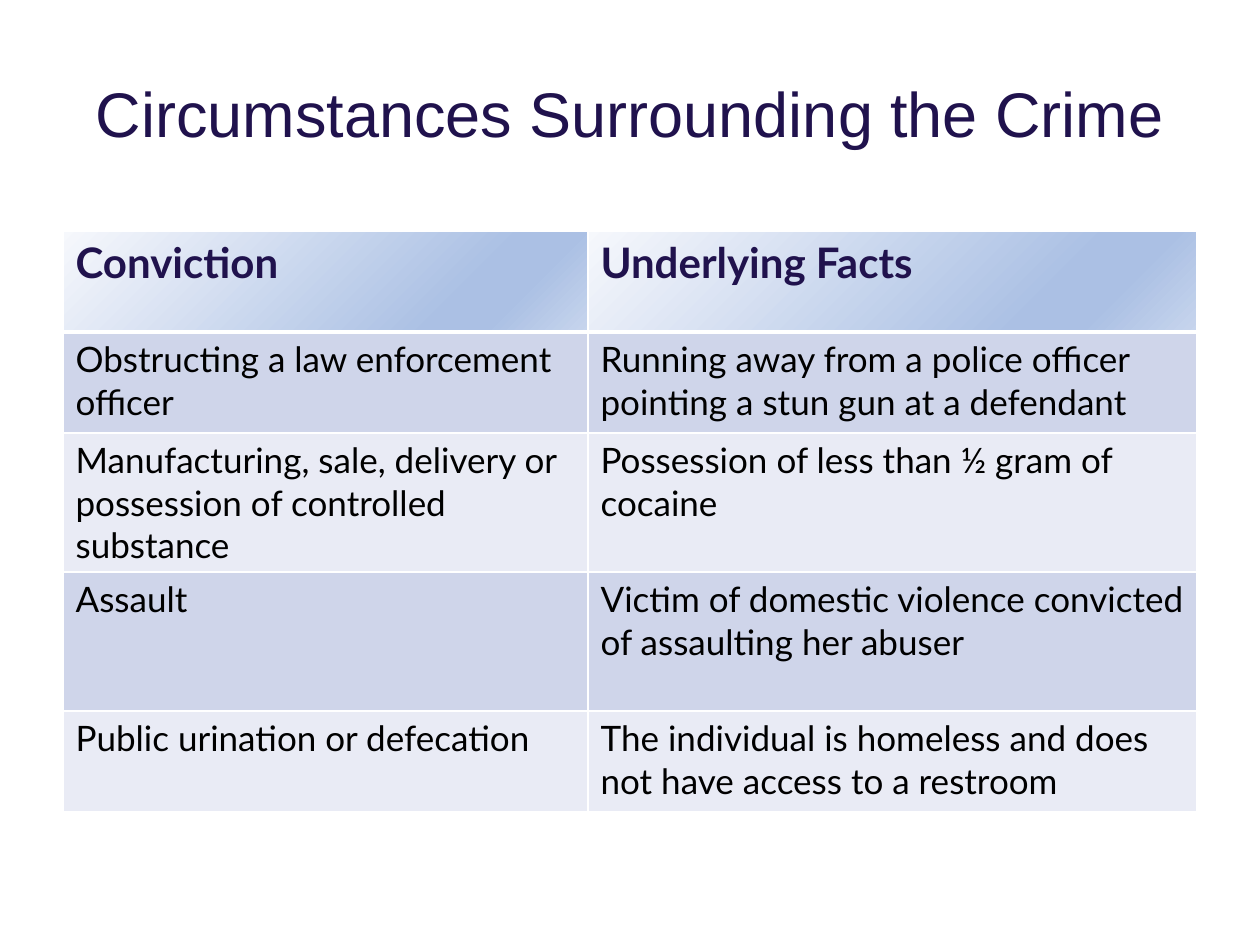
from typing import NamedTuple

from lxml.etree import SubElement
from pptx import Presentation
from pptx.dml.color import RGBColor
from pptx.enum.text import MSO_ANCHOR, PP_ALIGN
from pptx.oxml.ns import qn
from pptx.util import Emu, Pt

PX_PER_INCH = 126
NAVY = RGBColor(0x20, 0x12, 0x4D)
BLACK = RGBColor(0, 0, 0)
WHITE = RGBColor(0xFF, 0xFF, 0xFF)
BAND_DARK = RGBColor(0xCF, 0xD5, 0xEA)
BAND_LIGHT = RGBColor(0xE9, 0xEB, 0xF5)
HEADER_STOPS = (
    (0, RGBColor(0xF6, 0xF8, 0xFC)),
    (74, RGBColor(0xAB, 0xC0, 0xE4)),
    (83, RGBColor(0xAB, 0xC0, 0xE4)),
    (100, RGBColor(0xC7, 0xD5, 0xED)),
)
HEADER_ANGLE = 45

TITLE_FORMAT = {"name": "Arial", "size": Pt(36), "bold": False}
HEADER_FORMAT = {"name": "Lato", "size": Pt(24), "bold": True}
BODY_FORMAT = {"name": "Lato", "size": Pt(20), "bold": False}


class Case(NamedTuple):
    conviction: str
    facts: str
    height: int


HEADINGS = Case("Conviction", "Underlying Facts", 101)
CASES = (
    Case("Obstructing a law enforcement officer",
         "Running away from a police officer pointing a stun gun at a defendant", 101),
    Case("Manufacturing, sale, delivery or possession of controlled substance",
         "Possession of less than ½ gram of cocaine", 139),
    Case("Assault",
         "Victim of domestic violence convicted of assaulting her abuser", 139),
    Case("Public urination or defecation",
         "The individual is homeless and does not have access to a restroom", 101),
)
COLUMN_WIDTHS = (525, 609)


def px(length: int) -> Emu:
    return Emu(round(length * 914400 / PX_PER_INCH))


def write(paragraph, words: str, formatting: dict, color: RGBColor) -> None:
    run = paragraph.add_run()
    run.text = words
    for attribute, value in formatting.items():
        setattr(run.font, attribute, value)
    run.font.color.rgb = color


def draw_borders(cell, bottom: int) -> None:
    properties = cell._tc.get_or_add_tcPr()
    for side, width in {"L": 1, "R": 1, "T": 1, "B": bottom}.items():
        border = SubElement(properties, qn(f"a:ln{side}"), w=str(Pt(width)))
        paint = SubElement(border, qn("a:solidFill"))
        SubElement(paint, qn("a:srgbClr"), val=str(WHITE))


def fill_header(cell) -> None:
    gradient = SubElement(cell._tc.get_or_add_tcPr(), qn("a:gradFill"), rotWithShape="1")
    stops = SubElement(gradient, qn("a:gsLst"))
    for percent, color in HEADER_STOPS:
        stop = SubElement(stops, qn("a:gs"), pos=str(percent * 1000))
        SubElement(stop, qn("a:srgbClr"), val=str(color))
    SubElement(gradient, qn("a:lin"), ang=str(HEADER_ANGLE * 60000), scaled="0")


def draw_title(slide, words: str) -> None:
    frame = slide.shapes.add_textbox(px(63), px(38), px(1134), px(158)).text_frame
    frame.word_wrap = True
    frame.vertical_anchor = MSO_ANCHOR.MIDDLE
    heading = frame.paragraphs[0]
    heading.alignment = PP_ALIGN.CENTER
    heading.line_spacing = 0.9
    write(heading, words, TITLE_FORMAT, NAVY)


def draw_cases(slide) -> None:
    entries = (HEADINGS, *CASES)
    table = slide.shapes.add_table(
        len(entries), len(COLUMN_WIDTHS), px(63), px(231),
        px(sum(COLUMN_WIDTHS)), px(sum(entry.height for entry in entries)),
    ).table
    for column, width in zip(table.columns, COLUMN_WIDTHS):
        column.width = px(width)
    for index, entry in enumerate(entries):
        table.rows[index].height = px(entry.height)
        is_header = index == 0
        for column, words in enumerate((entry.conviction, entry.facts)):
            cell = table.cell(index, column)
            draw_borders(cell, 3 if is_header else 1)
            paragraph = cell.text_frame.paragraphs[0]
            if is_header:
                fill_header(cell)
                write(paragraph, words, HEADER_FORMAT, NAVY)
            else:
                cell.fill.solid()
                cell.fill.fore_color.rgb = BAND_DARK if index % 2 else BAND_LIGHT
                write(paragraph, words, BODY_FORMAT, BLACK)


def main() -> None:
    deck = Presentation()
    deck.slide_width, deck.slide_height = px(1260), px(945)
    slide = deck.slides.add_slide(deck.slide_layouts[6])
    draw_title(slide, "Circumstances Surrounding the Crime")
    draw_cases(slide)
    deck.save("out.pptx")


if __name__ == "__main__":
    main()
